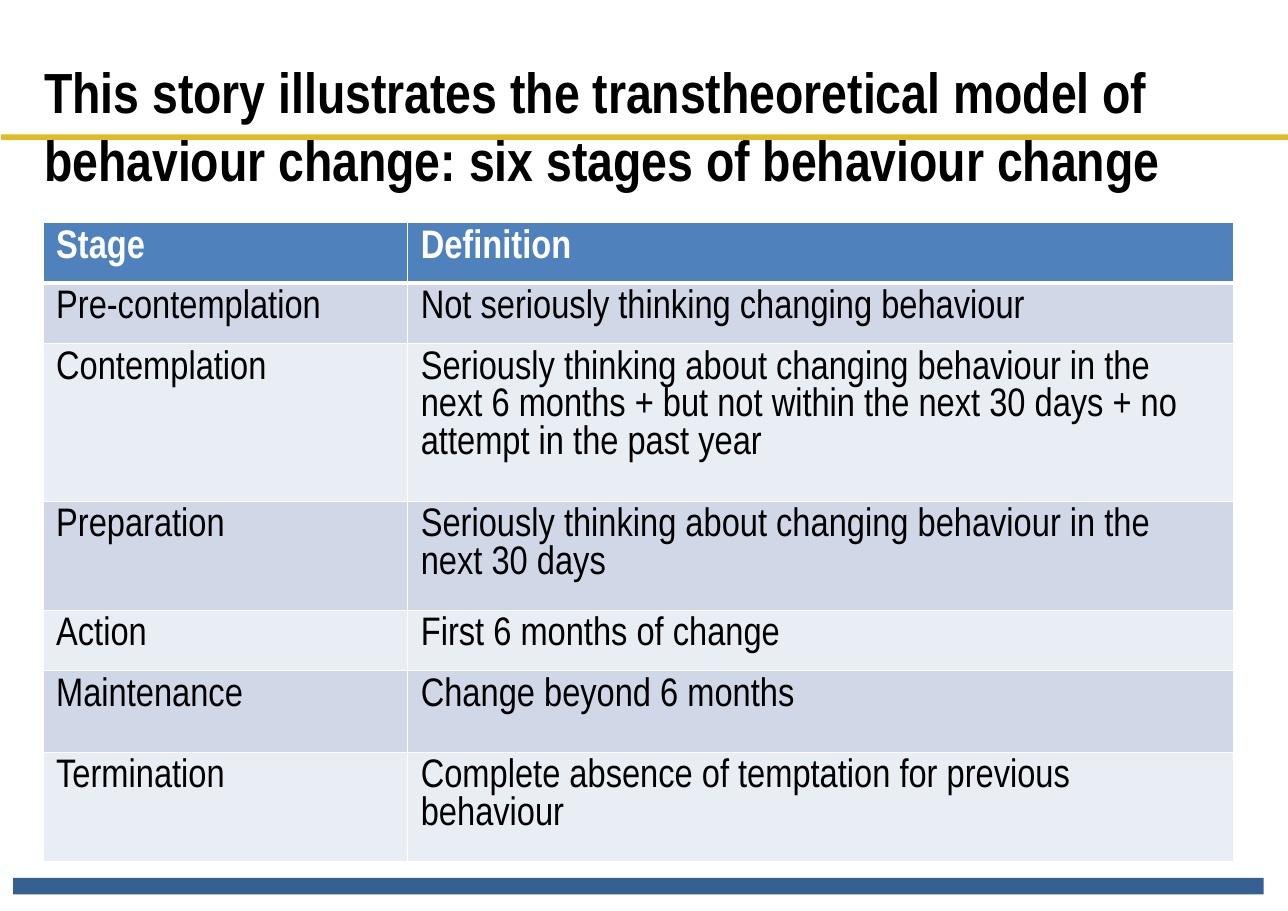
import pptx
import pptx.dml.color
import pptx.enum.shapes
import pptx.enum.text
import pptx.oxml.ns
import pptx.util
from lxml import etree
from pptx.util import Inches

FONT = "Arial Narrow"
TITLE = ("This story illustrates the transtheoretical model of "
         "behaviour change: six stages of behaviour change")
STAGES = [
    ("Stage", "Definition"),
    ("Pre-contemplation", "Not seriously thinking changing behaviour"),
    ("Contemplation", "Seriously thinking about changing behaviour in the next "
     "6 months + but not within the next 30 days + no attempt in the past year"),
    ("Preparation", "Seriously thinking about changing behaviour in the next 30 days"),
    ("Action", "First 6 months of change"),
    ("Maintenance", "Change beyond 6 months"),
    ("Termination", "Complete absence of temptation for previous behaviour"),
]
COLUMN_WIDTHS = [3.31, 7.5]
ROW_HEIGHTS = [0.55, 0.55, 1.43, 0.99, 0.55, 0.74, 0.99]
HEADER_FILL, BAND_FILLS = "4F81BD", ["E9EDF4", "D0D8E8"]


def colour(value):
    return pptx.dml.color.RGBColor.from_string(value)


def set_values(target, values):
    for name, value in values.items():
        setattr(target, name, value)


def set_fill(target, value):
    target.fill.solid()
    target.fill.fore_color.rgb = colour(value)


def set_insets(target, horizontal, vertical):
    """Set the margins of a cell or a text frame."""
    set_values(target, {"margin_left": Inches(horizontal),
                        "margin_right": Inches(horizontal),
                        "margin_top": Inches(vertical),
                        "margin_bottom": Inches(vertical),
                        "vertical_anchor": pptx.enum.text.MSO_ANCHOR.TOP})


def set_text(frame, text, size, text_colour, bold):
    """Write one left-aligned paragraph with the slide's font."""
    paragraph = frame.paragraphs[0]
    set_values(paragraph, {"alignment": pptx.enum.text.PP_ALIGN.LEFT,
                           "line_spacing": 1.0,
                           "space_before": pptx.util.Pt(0)})
    run = paragraph.add_run()
    run.text = text
    set_values(run.font, {"name": FONT, "size": pptx.util.Pt(size), "bold": bold})
    run.font.color.rgb = colour(text_colour)


def add_bar(slide, left, top, width, height, fill):
    shape = slide.shapes.add_shape(pptx.enum.shapes.MSO_SHAPE.RECTANGLE,
                                   *map(Inches, (left, top, width, height)))
    shape.shadow.inherit = False
    set_fill(shape, fill)
    shape.line.fill.background()


def set_borders(cell, widths):
    """Draw white cell borders; widths maps a side to points."""
    properties = cell._tc.get_or_add_tcPr()
    for side, width in widths.items():
        line = etree.SubElement(properties, pptx.oxml.ns.qn(f"a:ln{side}"),
                                w=str(pptx.util.Pt(width)))
        fill = etree.SubElement(line, pptx.oxml.ns.qn("a:solidFill"))
        etree.SubElement(fill, pptx.oxml.ns.qn("a:srgbClr"), val="FFFFFF")


def add_stage_table(slide):
    frame = slide.shapes.add_table(
        len(STAGES), len(COLUMN_WIDTHS), Inches(0.39), Inches(2.02),
        Inches(sum(COLUMN_WIDTHS)), Inches(sum(ROW_HEIGHTS)))
    table = frame.table
    for column, width in zip(table.columns, COLUMN_WIDTHS):
        column.width = Inches(width)
    for row, height in zip(table.rows, ROW_HEIGHTS):
        row.height = Inches(height)
    for row_index, texts in enumerate(STAGES):
        header = row_index == 0
        fill = HEADER_FILL if header else BAND_FILLS[row_index % 2]
        for column_index, text in enumerate(texts):
            cell = table.cell(row_index, column_index)
            set_borders(cell, {"L": 1, "R": 1, "T": 3 if row_index == 1 else 1,
                               "B": 3 if header else 1})
            set_fill(cell, fill)
            set_insets(cell, 0.12, 0.06)
            set_text(cell.text_frame, text, 26,
                     "FFFFFF" if header else "000000", header)


def place_title(slide):
    title = slide.shapes.title
    set_values(title, {"left": Inches(0.29), "top": Inches(0.46),
                       "width": Inches(11.21), "height": Inches(1.36)})
    set_insets(title.text_frame, 0.11, 0.06)
    set_values(title.text_frame, {"word_wrap": True,
                                  "auto_size": pptx.enum.text.MSO_AUTO_SIZE.NONE})
    set_text(title.text_frame, TITLE, 37, "000000", True)
    # Bring the title in front of the yellow bar
    slide.shapes._spTree.append(title._element)


def main():
    presentation = pptx.Presentation()
    set_values(presentation, {"slide_width": Inches(11.69), "slide_height": Inches(8.27)})
    slide = presentation.slides.add_slide(presentation.slide_layouts[5])

    # Footer and title bars
    add_bar(slide, 0.12, 7.97, 11.35, 0.15, "376092")
    add_bar(slide, 0.01, 1.22, 11.69, 0.05, "E0BB24")

    # Content
    add_stage_table(slide)
    place_title(slide)
    presentation.save("out.pptx")


if __name__ == "__main__":
    main()
